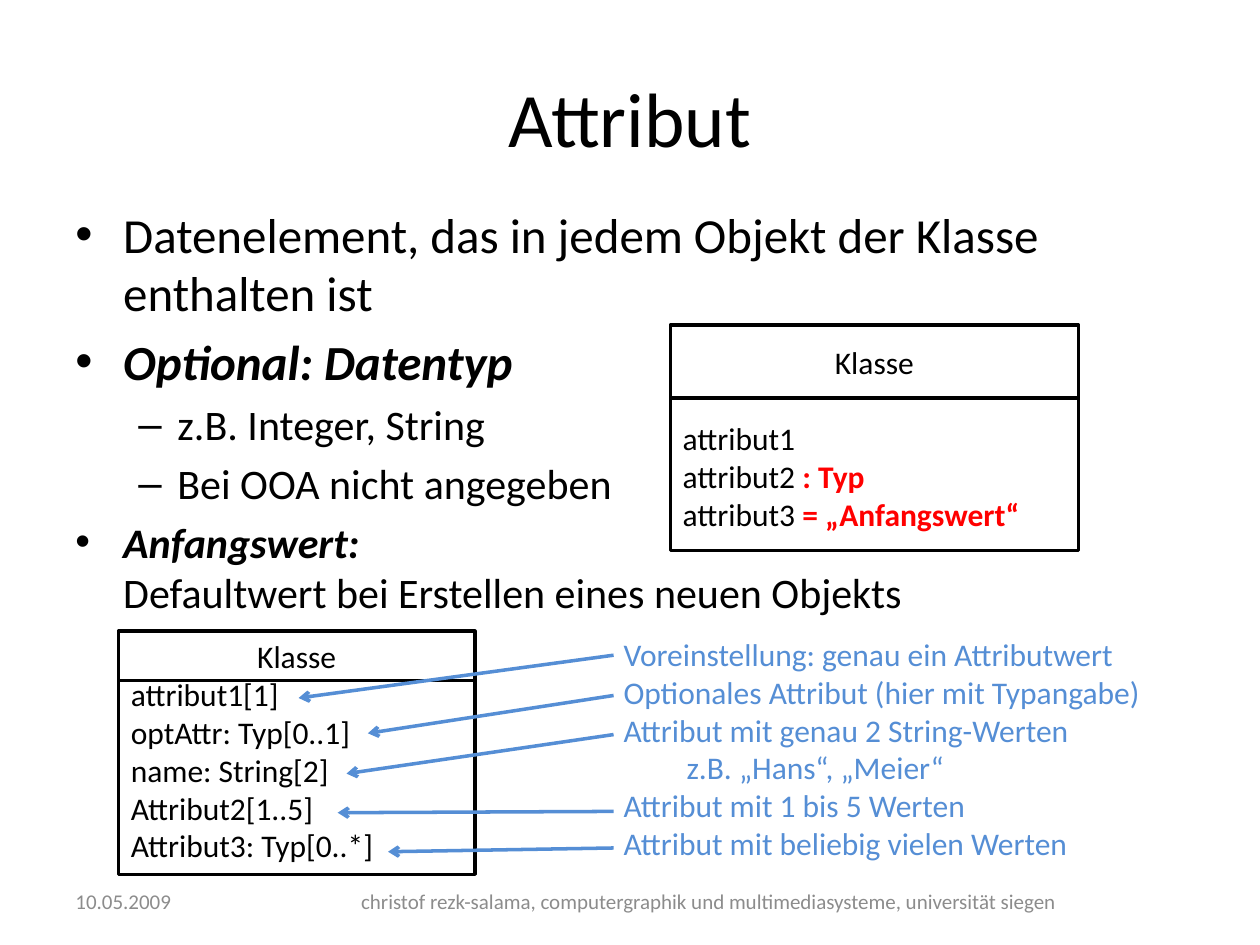
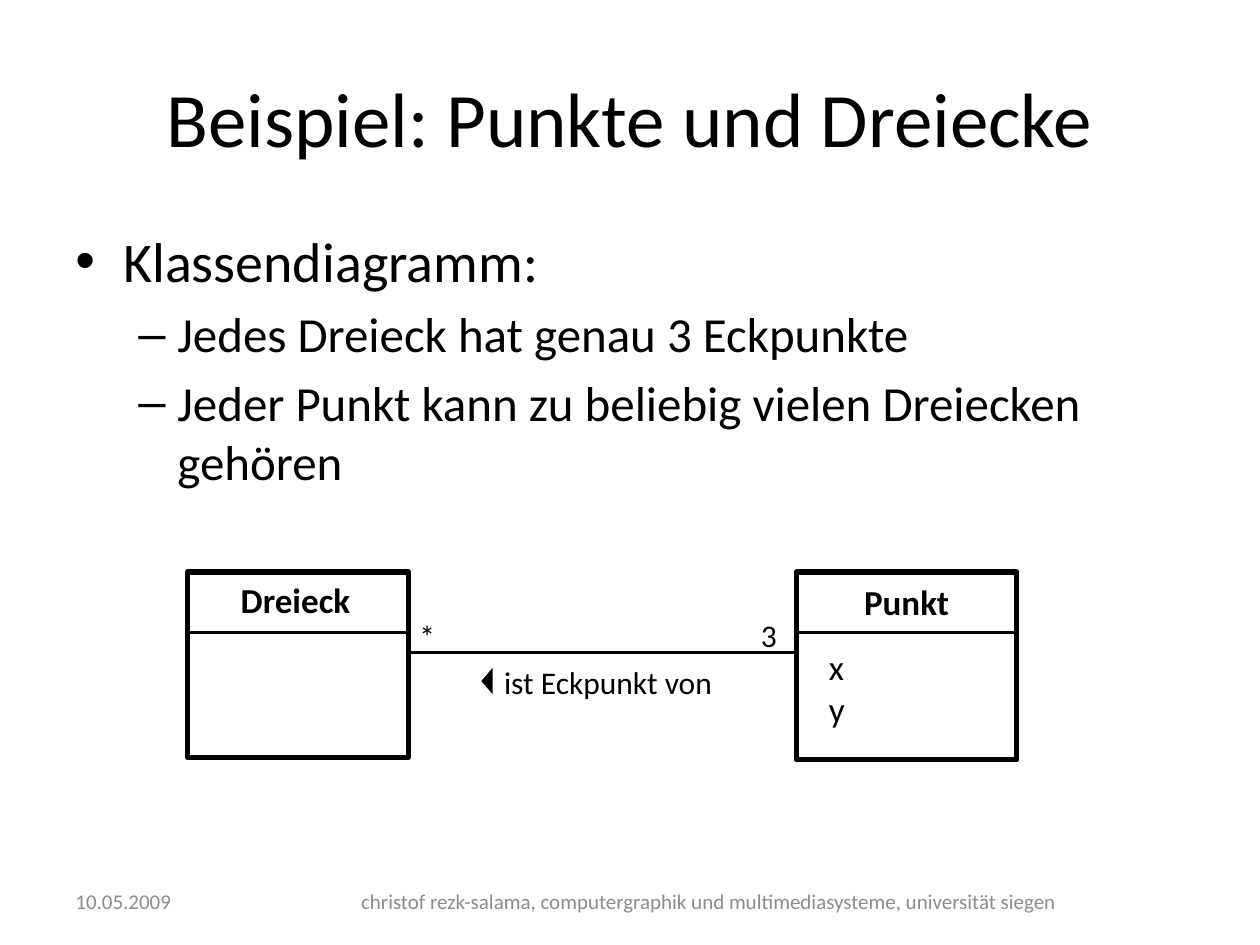
import pptx
import pptx.util
import pptx.dml.color
import pptx.enum.shapes
import pptx.enum.text
import pptx.oxml.ns
import lxml.etree

PX = 9144  # 100 px to the inch
FONT = "Calibri"
COLORS = {"black": "000000", "white": "FFFFFF", "grey": "8C8C8C",
          "red": "FF0000", "blue": "558ED5"}
ALIGN = pptx.enum.text.PP_ALIGN
ANCHOR = pptx.enum.text.MSO_ANCHOR
SHAPE = pptx.enum.shapes.MSO_SHAPE
DATE = "10.05.2009"
FOOTER = ("christof rezk-salama, computergraphik und multimediasysteme, "
          "universität siegen")
# bullet sign, left margin and hanging indent of each list level
LEVELS = [("•", 38, 38), ("–", 81, 31)]
RED_BOLD = {"color": "red", "bold": True}
KEYWORD = {"bold": True, "italic": True}


def rgb(name):
    return pptx.dml.color.RGBColor.from_string(COLORS[name])


def emu(*lengths):
    return [pptx.util.Emu(n * PX) for n in lengths]


def sub(parent, tag, **attrs):
    return lxml.etree.SubElement(parent, pptx.oxml.ns.qn(tag), attrs)


def style(font, color=None, bold=None, italic=None):
    if color:
        font.color.rgb = rgb(color)
    font.bold, font.italic = bold, italic


# ---- text ----
def add_par(tf, runs, size, color="black", align=None, level=None,
            before=0, **look):
    """Add a paragraph; runs is a string or a list of (text, look)."""
    first = len(tf.paragraphs) == 1 and not tf.paragraphs[0].runs
    p = tf.paragraphs[0] if first else tf.add_paragraph()
    if align is not None:
        p.alignment = align
    if before and not first:
        p.space_before = pptx.util.Pt(before)
    if level is not None:
        sign, margin, hang = LEVELS[level]
        pPr = p._p.get_or_add_pPr()
        pPr.set("lvl", str(level))
        pPr.set("marL", str(margin * PX))
        pPr.set("indent", str(-hang * PX))
        sub(pPr, "a:buFont", typeface="Arial")
        sub(pPr, "a:buChar", char=sign)
    p.font.name, p.font.size = FONT, pptx.util.Pt(size)
    style(p.font, color, **look)
    for text, run_look in [(runs, {})] if isinstance(runs, str) else runs:
        if text == "\n":
            p.add_line_break()
            continue
        r = p.add_run()
        r.text = text
        if run_look:
            style(r.font, **run_look)


def text_box(s, box, lines, size, anchor=ANCHOR.TOP, wrap=True, **look):
    tf = s.shapes.add_textbox(*emu(*box)).text_frame
    tf.word_wrap, tf.vertical_anchor = wrap, anchor
    for line in lines:
        add_par(tf, line, size, **look)
    return tf


def bullets(s, top, items):
    tf = text_box(s, (50, top, 900, 495), [], 0)
    for level, size, runs in items:
        add_par(tf, runs, size, level=level, before=size * 0.2)


# ---- shapes and lines ----
def shape(s, kind, box, fill, line_width=None):
    sp = s.shapes.add_shape(kind, *emu(*box))
    sp.shadow.inherit = False
    sp.fill.solid()
    sp.fill.fore_color.rgb = rgb(fill)
    if line_width:
        sp.line.color.rgb = rgb("black")
        sp.line.width = pptx.util.Pt(line_width)
    else:
        sp.line.fill.background()
    return sp


def line(s, start, end, color="black", width=2, arrow=False):
    c = s.shapes.add_connector(pptx.enum.shapes.MSO_CONNECTOR.STRAIGHT,
                               *emu(*start, *end))
    c.line.color.rgb = rgb(color)
    c.line.width = pptx.util.Pt(width)
    if arrow:
        sub(c.line._get_or_add_ln(), "a:tailEnd", type="arrow")
    sub(c._element.spPr, "a:effectLst")


def class_box(s, box, divider, border=2, divider_width=2):
    """Draw a class rectangle with a divider below its name."""
    x, y, w, h = box
    sp = shape(s, SHAPE.RECTANGLE, box, "white", border)
    line(s, (x, divider), (x + w, divider), width=divider_width)
    tf = sp.text_frame
    tf.word_wrap, tf.vertical_anchor = True, ANCHOR.TOP
    return tf


# ---- slides ----
def new_slide(prs, title):
    s = prs.slides.add_slide(prs.slide_layouts[6])
    text_box(s, (50, 30, 900, 125), [title], 44, ANCHOR.MIDDLE,
             align=ALIGN.CENTER)
    text_box(s, (50, 695, 192, 40), [DATE], 12, ANCHOR.MIDDLE, color="grey")
    text_box(s, (250, 695, 625, 40), [FOOTER], 12, ANCHOR.MIDDLE,
             color="grey", align=ALIGN.CENTER)
    return s


def attribute_slide(prs):
    s = new_slide(prs, "Attribut")
    bullets(s, 157, [
        (0, 28, "Datenelement, das in jedem Objekt der Klasse enthalten ist"),
        (0, 28, [("Optional: Datentyp", KEYWORD)]),
        (1, 24, "z.B. Integer, String"),
        (1, 24, "Bei OOA nicht angegeben"),
        (0, 24, [("Anfangswert: ", KEYWORD), ("\n", {}),
                 ("Defaultwert bei Erstellen eines neuen Objekts", {})]),
    ])

    # Class with type and initial value
    tf = class_box(s, (532, 258, 324, 179), 316)
    tf.vertical_anchor = ANCHOR.MIDDLE
    add_par(tf, "Klasse", 18, align=ALIGN.CENTER)
    add_par(tf, "attribut1", 18, align=ALIGN.LEFT, before=22)
    for name, extra in [("attribut2 ", ": Typ"),
                        ("attribut3 ", "= „Anfangswert“")]:
        add_par(tf, [(name, {}), (extra, RED_BOLD)], 18, align=ALIGN.LEFT)

    # Class with multiplicities
    tf = class_box(s, (94, 501, 283, 193), 540)
    add_par(tf, "Klasse", 18, align=ALIGN.CENTER)
    for attribute in ["attribut1[1]", "optAttr: Typ[0..1]", "name: String[2]",
                      "Attribut2[1..5]", "Attribut3: Typ[0..*]"]:
        add_par(tf, attribute, 18, align=ALIGN.LEFT)

    # Explanations and their arrows
    text_box(s, (485, 499, 435, 192), [
        "Voreinstellung: genau ein Attributwert",
        "Optionales Attribut (hier mit Typangabe)",
        "Attribut mit genau 2 String-Werten",
        "\tz.B. „Hans“, „Meier“",
        "Attribut mit 1 bis 5 Werten",
        "Attribut mit beliebig vielen Werten",
    ], 18, color="blue")
    for start_y, tip in [(520, (237, 554)), (552, (292, 582)),
                         (583, (275, 614)), (644, (268, 645)),
                         (673, (308, 676))]:
        line(s, (487, start_y), tip, "blue", arrow=True)


def example_slide(prs):
    s = new_slide(prs, "Beispiel: Punkte und Dreiecke")
    bullets(s, 175, [
        (0, 32, "Klassendiagramm:"),
        (1, 28, "Jedes Dreieck hat genau 3 Eckpunkte"),
        (1, 28, "Jeder Punkt kann zu beliebig vielen Dreiecken gehören"),
    ])

    # Classes
    for name, x, height, name_x, name_y in [("Dreieck", 149, 147, 149, 454),
                                            ("Punkt", 632, 149, 634, 456)]:
        class_box(s, (x, 454, 175, height), 502, 3, 1.75)
        text_box(s, (name_x, name_y, 171, 44), [name], 20,
                 align=ALIGN.CENTER, bold=True)
    text_box(s, (648, 507, 155, 77), ["x", "y"], 20)

    # Association with reading direction and multiplicities
    line(s, (324, 518), (632, 518))
    text_box(s, (387, 521, 188, 40), ["ist Eckpunkt von"], 18, wrap=False,
             align=ALIGN.RIGHT)
    sp = shape(s, SHAPE.ISOSCELES_TRIANGLE, (376, 536, 21, 9), "black")
    sp.rotation = 270
    for count, x, y in [("3", 594, 484), ("*", 323, 485)]:
        text_box(s, (x, y, 33, 40), [count], 18, wrap=False)


def main():
    prs = pptx.Presentation()
    prs.slide_width, prs.slide_height = emu(1000, 750)
    attribute_slide(prs)
    example_slide(prs)
    prs.save("out.pptx")


if __name__ == "__main__":
    main()
